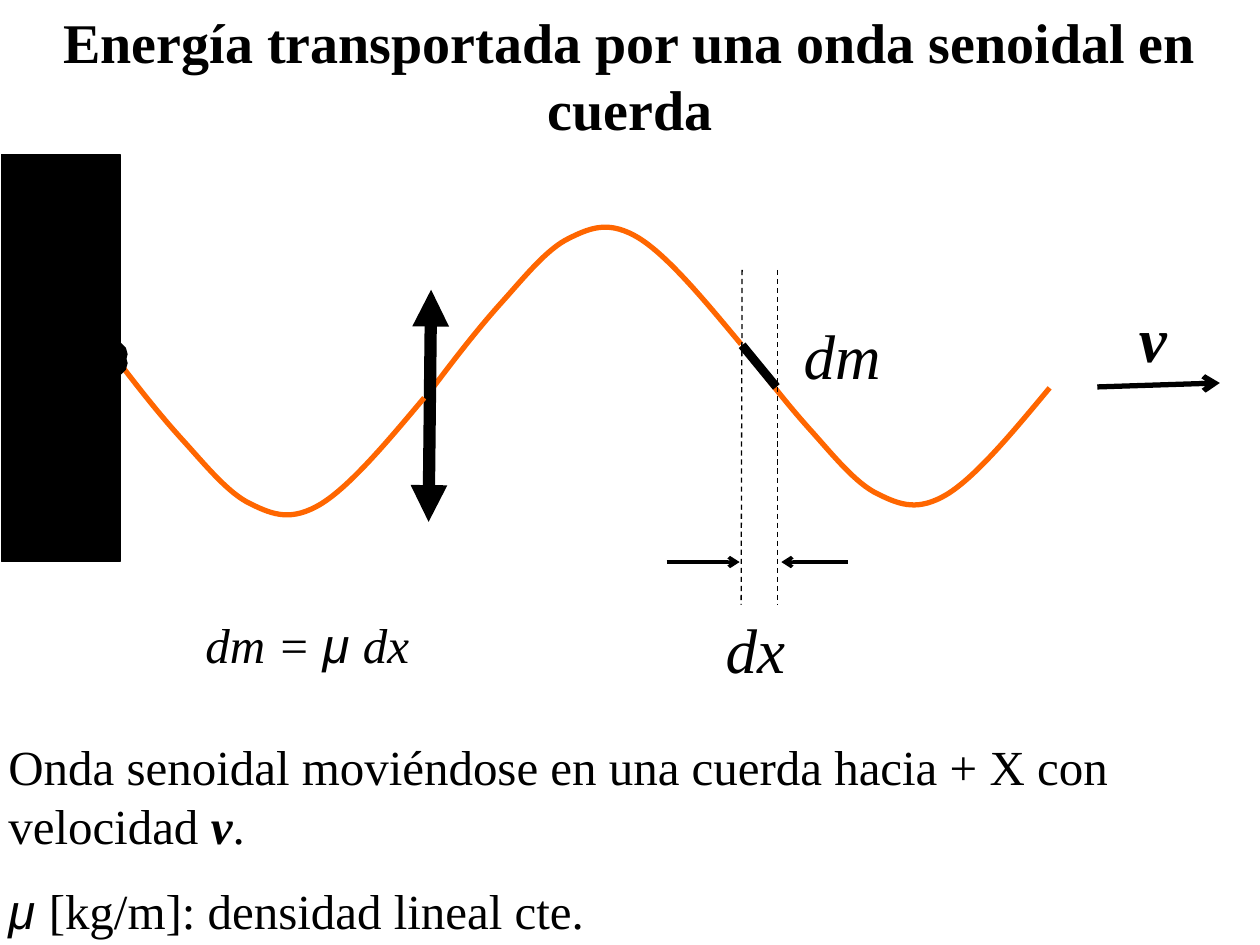
from pptx import Presentation
from pptx.dml.color import RGBColor as RGB
from pptx.enum.dml import MSO_LINE as Dash
from pptx.enum.shapes import MSO_CONNECTOR as Conn, MSO_SHAPE as Shp
from pptx.enum.text import MSO_ANCHOR as Anchor, MSO_AUTO_SIZE as Auto, PP_ALIGN as Align
from pptx.oxml.ns import qn
from pptx.util import Cm, Pt

COLORS = {"ink": "000000", "rope": "FF6600"}
SERIF, SANS = "Times New Roman", "Arial"

WALL = (0.03, 3.12, 2.39, 8.2)

# Half a wave: Bezier points (x, y) measured from its start
HALF = [(0.46, 0.61), (0.91, 1.19), (1.37, 1.7),
        (1.83, 2.21), (2.29, 2.79), (2.74, 3.0),
        (3.2, 3.23), (3.56, 3.35), (4.14, 3.0),
        (4.72, 2.64), (5.46, 1.75), (6.2, 0.86)]
# start x, start y, x scale, direction (1 trough, -1 crest)
CREST = (8.74, 7.8, 1, -1)
RIGHT = (14.96, 6.96, 1, 1)
LEFT = (2.29, 7.16, 1.01, 1)

# x1, y1, x2, y2, width, options
LINES = [
    (14.96, 6.96, 15.65, 7.8, 5, {}),
    (22.12, 7.8, 24.59, 7.72, 3, {"tail": "arrow"}),
    (8.64, 10.52, 8.69, 5.84, 7, {"head": "triangle", "tail": "triangle"}),
    (14.96, 5.44, 14.94, 12.19, 0.75, {"dash": True}),
    (15.67, 5.44, 15.67, 12.19, 0.75, {"dash": True}),
    (13.44, 11.33, 14.91, 11.33, 2, {"tail": "arrow"}),
    (15.75, 11.33, 17.09, 11.33, 2, {"head": "arrow"}),
]
KNOT = (2.31, 7.32, 2.31, 7.14, 5, {"head": "oval", "tail": "oval"})

# box, size, space before, paragraphs of (text, style, font)
TITLE = ((0, -0.08, 25.4, 3.18), 32, 0,
         [[("Energía transportada por una onda senoidal en cuerda", "b", SERIF)]])
TEXTS = [
    ((-0.08, 14.73, 25.48, 4.39), 28, 15, [
        [("Onda senoidal moviéndose en una cuerda hacia + X con velocidad ", "", SERIF),
         ("v", "bi", SERIF), (".", "", SERIF)],
        [("μ ", "i", SANS), ("[kg/m]: densidad lineal cte.", "", SERIF)]]),
    ((15.95, 6.25, 4.57, 1.8), 36, 10, [[("dm", "i", SERIF)]]),
    ((14.38, 12.19, 3.1, 1.8), 36, 10, [[("dx", "i", SERIF)]]),
    ((3.89, 12.27, 8.41, 1.47), 28, 10,
     [[("dm = ", "i", SERIF), ("μ ", "i", SANS), ("dx", "i", SERIF)]]),
]
SPEED = ((22.71, 5.92, 1.09, 1.8), 36, 0, [[("v", "bi", SERIF)]])

prs = Presentation()
prs.slide_width, prs.slide_height = Cm(25.4), Cm(19.05)
slide = prs.slides.add_slide(prs.slide_layouts[6])
shapes = slide.shapes


def color(name):
    return RGB.from_string(COLORS[name])


def add_text(box, size, gap, paras, wrap=True):
    frame = shapes.add_textbox(*map(Cm, box)).text_frame
    frame.word_wrap = wrap
    frame.auto_size = Auto.SHAPE_TO_FIT_TEXT
    for i, runs in enumerate(paras):
        para = frame.add_paragraph() if i else frame.paragraphs[0]
        para.space_before = Pt(gap)
        para.font.size = Pt(size)
        para.font.color.rgb = color("ink")
        for text, style, font in runs:
            run = para.add_run()
            run.text = text
            run.font.name = font
            run.font.bold = "b" in style
            run.font.italic = "i" in style
    return frame


def add_line(x1, y1, x2, y2, width, opts):
    link = shapes.add_connector(Conn.STRAIGHT, Cm(x1), Cm(y1), Cm(x2), Cm(y2))
    link.line.color.rgb = color("ink")
    link.line.width = Pt(width)
    if opts.get("dash"):
        link.line.dash_style = Dash.DASH
    props = link._element.spPr
    stroke = props.find(qn("a:ln"))
    for end in ("head", "tail"):
        if end in opts:
            tip = stroke.makeelement(qn(f"a:{end}End"), {"type": opts[end]})
            stroke.append(tip)
    props.append(props.makeelement(qn("a:effectLst"), {}))


def add_wave(x, y, scale, way):
    """Draw half a wave, turning each three straight steps into one curve."""
    pen = shapes.build_freeform(Cm(x), Cm(y))
    pen.add_line_segments(
        [(Cm(x + scale * dx), Cm(y + way * dy)) for dx, dy in HALF], close=False)
    wave = pen.convert_to_shape()
    wave.shadow.inherit = False
    wave.fill.background()
    wave.line.color.rgb = color("rope")
    wave.line.width = Pt(3)
    track = next(wave._element.iter(qn("a:path")))
    steps = track.findall(qn("a:lnTo"))
    for i in range(0, len(steps), 3):
        curve = track.makeelement(qn("a:cubicBezTo"), {})
        for step in steps[i:i + 3]:
            curve.append(step[0])
            track.remove(step)
        track.append(curve)


title = add_text(*TITLE)
title.auto_size = Auto.NONE
title.vertical_anchor = Anchor.MIDDLE
title.paragraphs[0].alignment = Align.CENTER

wall = shapes.add_shape(Shp.RECTANGLE, *map(Cm, WALL))
wall.shadow.inherit = False
wall.fill.solid()
wall.fill.fore_color.rgb = color("ink")
wall.line.color.rgb = color("ink")
wall.line.width = Pt(0.75)

add_wave(*CREST)
add_wave(*RIGHT)
for item in LINES:
    add_line(*item)
for item in TEXTS:
    add_text(*item)
add_text(*SPEED, wrap=False)
add_wave(*LEFT)
add_line(*KNOT)

prs.save("out.pptx")
